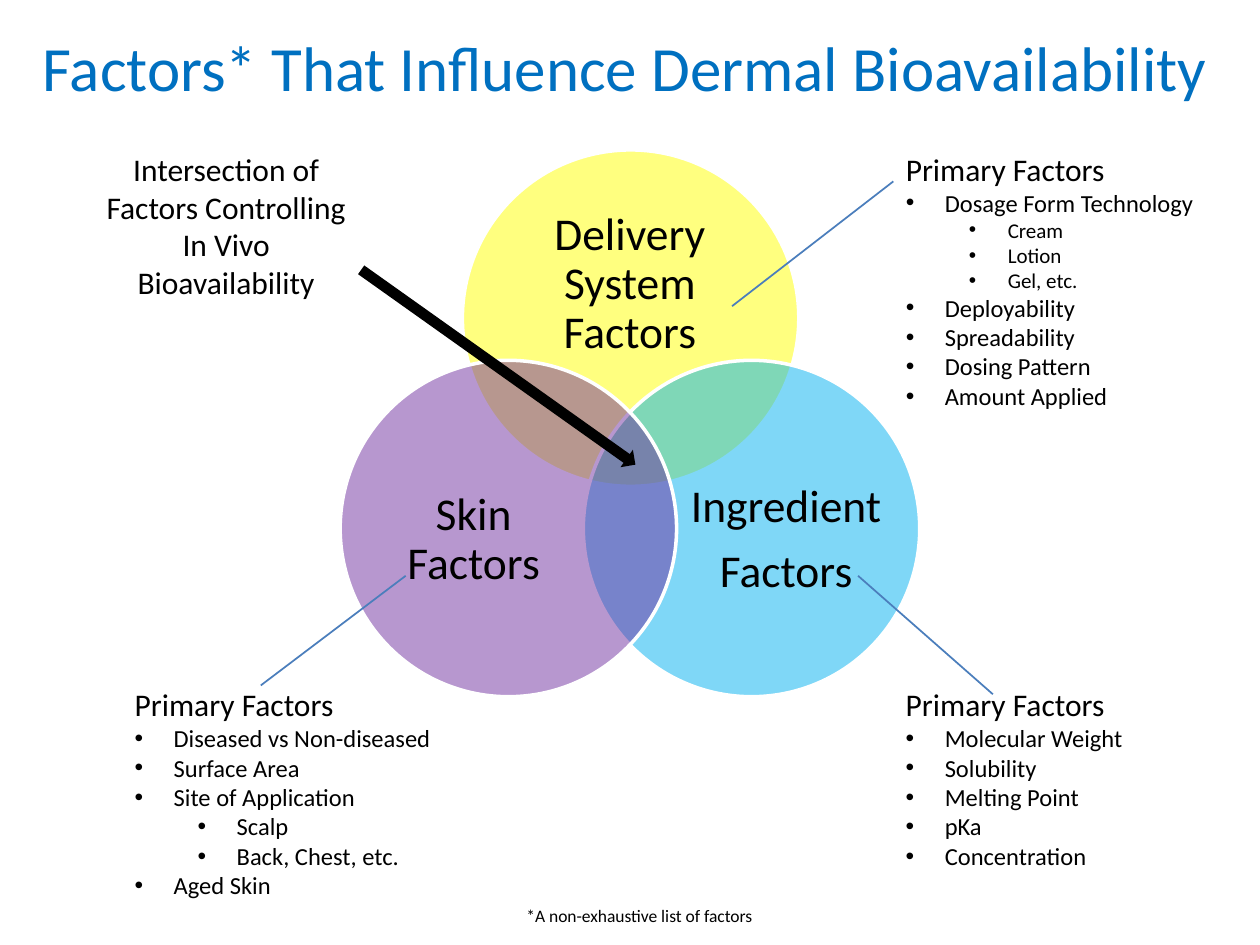
from lxml import etree
from pptx import Presentation
from pptx.dml.color import RGBColor
from pptx.enum.shapes import MSO_CONNECTOR, MSO_SHAPE
from pptx.enum.text import MSO_ANCHOR, MSO_AUTO_SIZE, PP_ALIGN
from pptx.oxml.ns import qn
from pptx.util import Inches, Pt

CENTER, LEFT = PP_ALIGN.CENTER, PP_ALIGN.LEFT
MIDDLE, TOP = MSO_ANCHOR.MIDDLE, MSO_ANCHOR.TOP
FONT, BLACK, WHITE, LEADER_BLUE = "Calibri", "000000", "FFFFFF", "4B7EBC"
CIRCLE_SIZE = 2.67
HEADING_SIZE, BULLET_SIZE = 18, 14
HANG, LEVEL_STEP = 0.31, 0.5
LEFT_COLUMN, RIGHT_COLUMN = 0.97, 7.09
TOP_ROW, BOTTOM_ROW = 1.14, 5.39

# Circles, back to front: left, top, colour, label lines, label box
CIRCLES = [
    (3.67, 1.19, "FFFF00", ["Delivery System Factors"], (4.02, 1.66, 1.96, 1.2)),
    (4.63, 2.86, "00B0F0", ["Ingredient", "Factors"], (5.44, 3.55, 1.6, 1.47)),
    (2.7, 2.86, "7030A0", ["Skin Factors"], (2.96, 3.55, 1.6, 1.47)),
]

# Factor lists: box, size of sub-bullets, (level, text) items, leader line
FACTOR_LISTS = [
    ((RIGHT_COLUMN, TOP_ROW, 2.51, 2.96), 12,
     [(0, "Dosage Form Technology"), (1, "Cream"), (1, "Lotion"), (1, "Gel, etc."),
      (0, "Deployability"), (0, "Spreadability"), (0, "Dosing Pattern"),
      (0, "Amount Applied")],
     (5.81, 2.43, 7.09, 1.44)),
    ((LEFT_COLUMN, BOTTOM_ROW, 2.58, 1.82), 14,
     [(0, "Diseased vs Non-diseased"), (0, "Surface Area"), (0, "Site of Application"),
      (1, "Scalp"), (1, "Back, Chest, etc."), (0, "Aged Skin")],
     (2.07, 5.44, 3.22, 4.57)),
    ((RIGHT_COLUMN, BOTTOM_ROW, 1.94, 1.58), 14,
     [(0, "Molecular Weight"), (0, "Solubility"), (0, "Melting Point"), (0, "pKa"),
      (0, "Concentration")],
     (6.81, 4.57, 7.88, 5.51)),
]

# Single texts: text, box, size, colour, alignment, wrap
CAPTIONS = [
    ("Intersection of Factors Controlling In Vivo Bioavailability",
     (0.68, TOP_ROW, 2.23, 1.31), 18, BLACK, CENTER, True),
    ("Factors* That Influence Dermal Bioavailability",
     (0.24, 0.18, 9.83, 0.71), 36, "0070C0", LEFT, True),
    ("*A non-exhaustive list of factors",
     (4.08, 7.13, 2.03, 0.27), 10, BLACK, LEFT, False),
]


def rgb(code):
    return RGBColor.from_string(code)


def inches(values):
    return [Inches(value) for value in values]


def add_box(box, wrap, anchor=TOP):
    frame = slide.shapes.add_textbox(*inches(box)).text_frame
    frame.word_wrap = wrap
    frame.vertical_anchor = anchor
    return frame


def add_line(frame, index, text, size, color=BLACK, align=LEFT):
    paragraph = frame.add_paragraph() if index else frame.paragraphs[0]
    paragraph.alignment = align
    run = paragraph.add_run()
    run.text = text
    run.font.name, run.font.size = FONT, Pt(size)
    run.font.color.rgb = rgb(color)
    return paragraph


def add_bullet(paragraph, level):
    paragraph.level = level
    properties = paragraph._p.get_or_add_pPr()
    properties.set("marL", str(Inches(HANG + level * LEVEL_STEP)))
    properties.set("indent", str(-Inches(HANG)))
    etree.SubElement(properties, qn("a:buFont"), typeface="Arial")
    etree.SubElement(properties, qn("a:buChar"), char="•")


def add_filled(preset, box, color):
    shape = slide.shapes.add_shape(preset, *inches(box))
    shape.shadow.inherit = False
    shape.fill.solid()
    shape.fill.fore_color.rgb = rgb(color)
    return shape


def add_leader(ends):
    leader = slide.shapes.add_connector(MSO_CONNECTOR.STRAIGHT, *inches(ends))
    leader.line.color.rgb = rgb(LEADER_BLUE)
    leader.line.width = Pt(1)
    etree.SubElement(leader._element.spPr, qn("a:effectLst"))


prs = Presentation()
prs.slide_width, prs.slide_height = Inches(10), Inches(7.5)
slide = prs.slides.add_slide(prs.slide_layouts[6])

# Overlapping half-transparent circles with their labels
for left, top, color, lines, label_box in CIRCLES:
    circle = add_filled(MSO_SHAPE.OVAL, (left, top, CIRCLE_SIZE, CIRCLE_SIZE), color)
    circle.line.color.rgb = rgb(WHITE)
    circle.line.width = Pt(2)
    tint = circle._element.spPr.find(qn("a:solidFill"))[0]
    etree.SubElement(tint, qn("a:alpha"), val="50000")
    label = add_box(label_box, True, MIDDLE)
    label.margin_left = label.margin_right = label.margin_top = label.margin_bottom = 0
    for index, text in enumerate(lines):
        paragraph = add_line(label, index, text, 26, align=CENTER)
        paragraph.line_spacing = 0.9
        paragraph.space_after = Pt(9)

# Factor lists with leader lines
for box, sub_size, items, leader_ends in FACTOR_LISTS:
    add_leader(leader_ends)
    frame = add_box(box, False)
    add_line(frame, 0, "Primary Factors", HEADING_SIZE)
    for index, (level, text) in enumerate(items, 1):
        size = sub_size if level else BULLET_SIZE
        add_bullet(add_line(frame, index, text, size), level)
    frame.auto_size = MSO_AUTO_SIZE.SHAPE_TO_FIT_TEXT

# Arrow into the shared centre
arrow = add_filled(MSO_SHAPE.RIGHT_ARROW, (2.62, 2.83, 2.67, 0.17), BLACK)
arrow.line.fill.background()
arrow.rotation = 35.4

# Title, arrow caption and footnote
for text, box, size, color, align, wrap in CAPTIONS:
    frame = add_box(box, wrap)
    add_line(frame, 0, text, size, color, align)
    frame.auto_size = MSO_AUTO_SIZE.SHAPE_TO_FIT_TEXT

prs.save("out.pptx")
